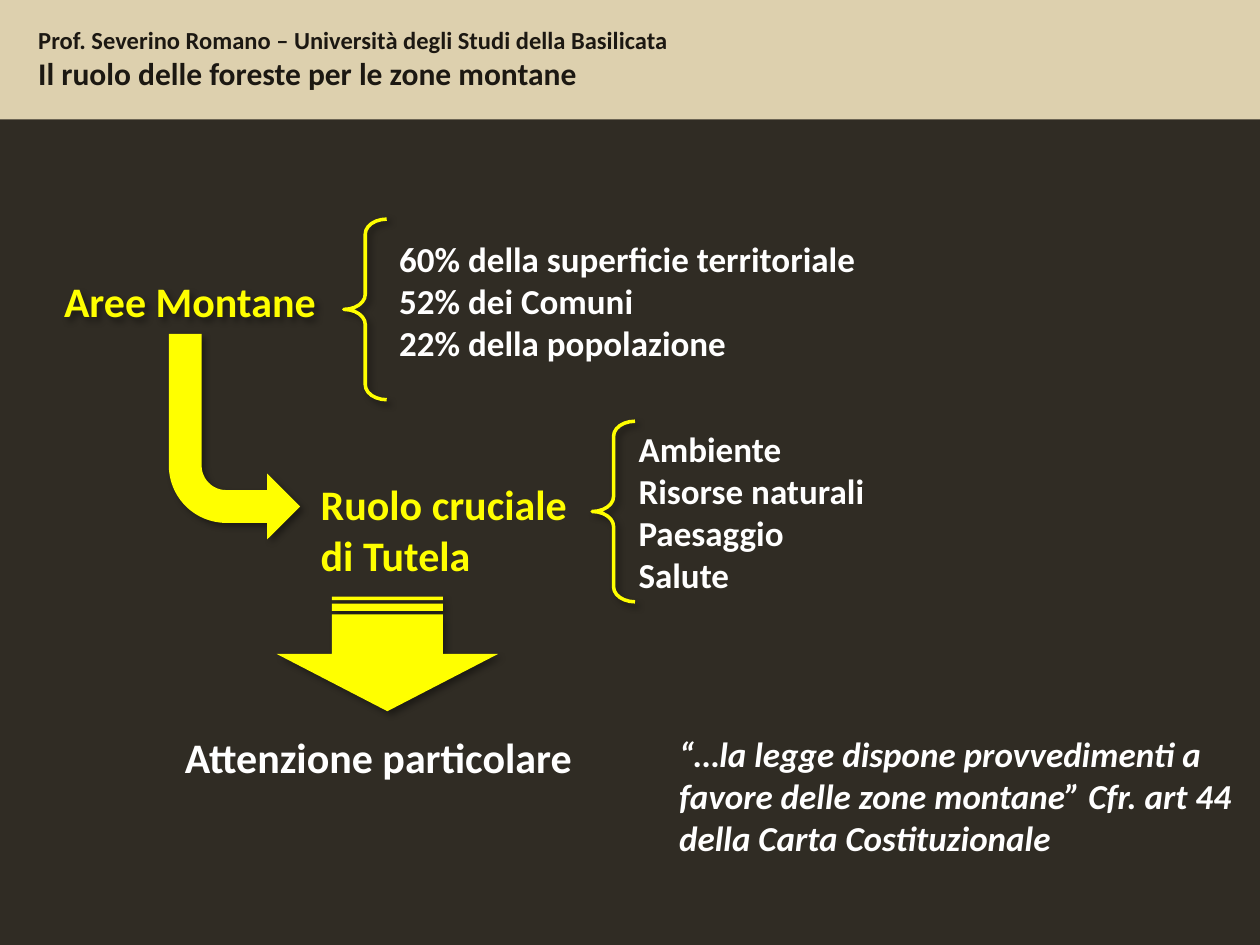
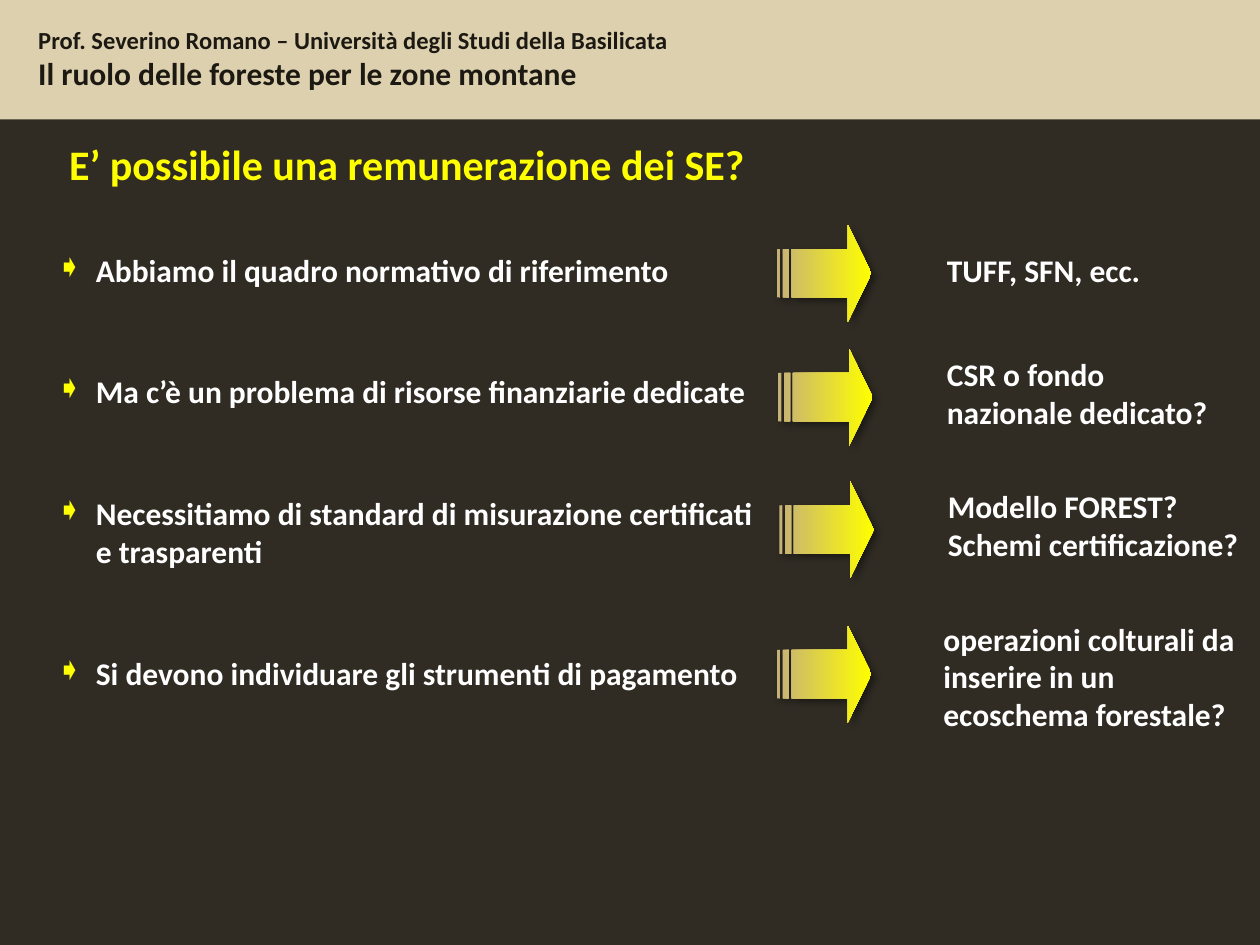
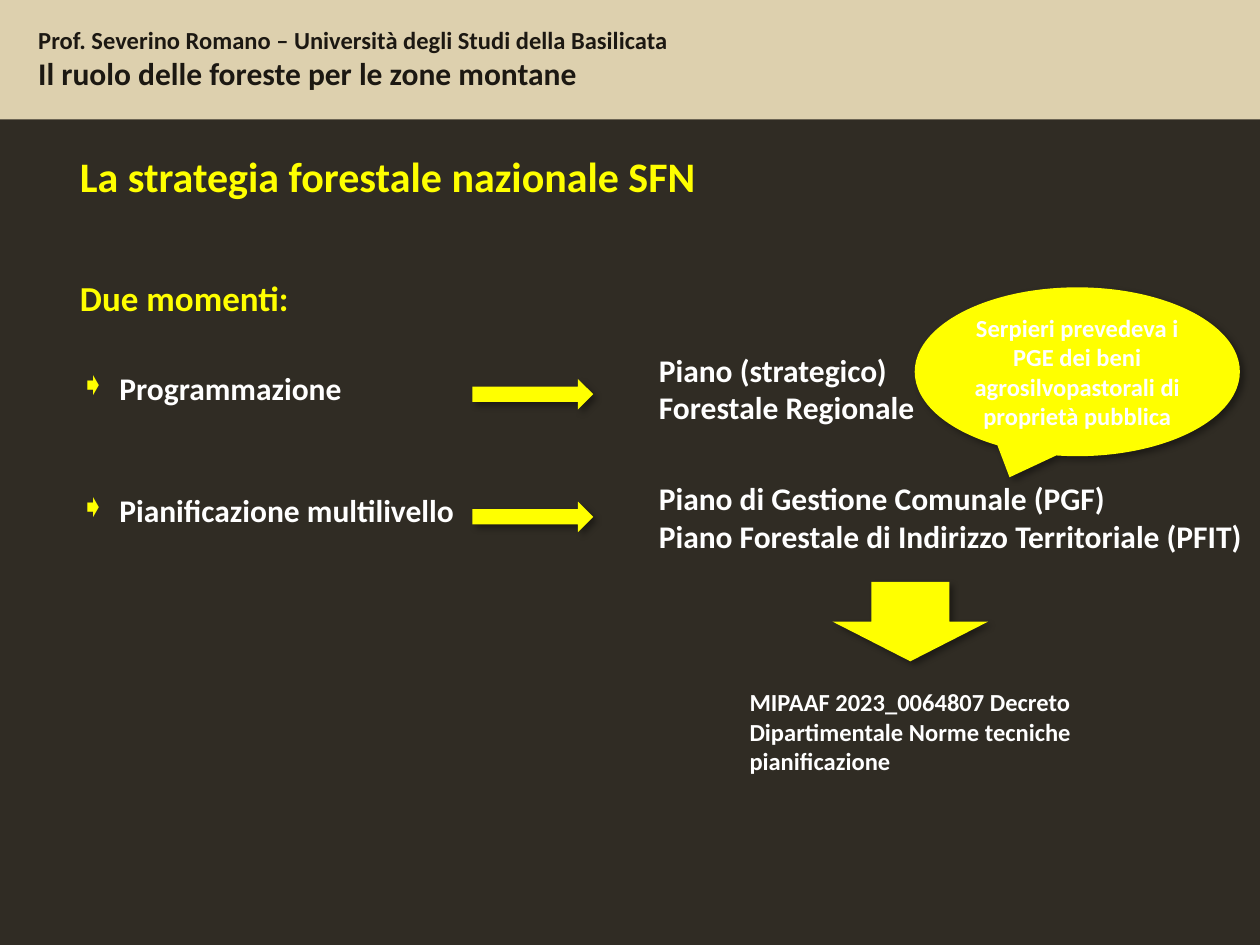
from lxml import etree
from pptx import Presentation
from pptx.dml.color import RGBColor
from pptx.enum.shapes import MSO_SHAPE
from pptx.enum.text import MSO_ANCHOR, MSO_AUTO_SIZE, PP_ALIGN
from pptx.oxml.ns import qn
from pptx.util import Pt

# Shared look
FONT = "Calibri"
DARK, SAND, INK = "302C24", "DDD0AE", "1C1812"
YELLOW, WHITE, OCHRE, BLACK = "FFFF00", "FFFFFF", "C6B178", "000000"
BULLET_INDENT = 22.5


def color(hex_value):
    return RGBColor.from_string(hex_value)


def child(parent, tag, **attributes):
    return etree.SubElement(parent, qn(tag), attributes)


# Text
def add_span(para, text, size, hex_value, italic=False):
    span = para.add_run()
    span.text = text
    span.font.name = FONT
    span.font.size = Pt(size)
    span.font.bold = True
    span.font.italic = italic
    span.font.color.rgb = color(hex_value)


def add_text(page, area, lines, size, hex_value=WHITE, wrap=True, italic=False):
    """Place one paragraph per line; a line may be a (text, size) pair."""
    box = page.shapes.add_textbox(*(Pt(value) for value in area))
    frame = box.text_frame
    frame.word_wrap = wrap
    frame.auto_size = MSO_AUTO_SIZE.SHAPE_TO_FIT_TEXT
    for index, line in enumerate(lines):
        para = frame.paragraphs[0] if index == 0 else frame.add_paragraph()
        text, line_size = line if isinstance(line, tuple) else (line, size)
        add_span(para, text, line_size, hex_value, italic)
    return box


def add_bullets(page, area, lines, before, after):
    box = add_text(page, area, lines, 18)
    for index, para in enumerate(box.text_frame.paragraphs):
        properties = para._p.get_or_add_pPr()
        properties.set("marL", str(Pt(BULLET_INDENT)))
        properties.set("indent", str(-Pt(BULLET_INDENT)))
        child(child(properties, "a:buClr"), "a:srgbClr", val=YELLOW)
        child(properties, "a:buChar", char="➧")
        para.space_before = Pt(before if index else 0)
        para.space_after = Pt(after)


# Shapes
def add_shadow(shape):
    shape.shadow.inherit = False
    effects = shape.element.spPr.find(qn("a:effectLst"))
    shadow = child(effects, "a:outerShdw", blurRad=str(Pt(4)), dist=str(Pt(3)),
                   dir="2700000", algn="tl", rotWithShape="0")
    child(child(shadow, "a:srgbClr", val=BLACK), "a:alpha", val="40000")


def add_figure(page, kind, area, rotation=0):
    figure = page.shapes.add_shape(kind, *(Pt(value) for value in area))
    figure.fill.solid()
    figure.fill.fore_color.rgb = color(YELLOW)
    figure.line.fill.background()
    figure.rotation = rotation
    add_shadow(figure)
    return figure


def add_brace(page, left, top):
    brace = add_figure(page, MSO_SHAPE.LEFT_BRACE, (left, top, 24.5, 103.2))
    brace.adjustments[0] = 0.35
    brace.fill.background()
    brace.line.color.rgb = color(YELLOW)
    brace.line.width = Pt(2)


def add_striped_arrow(page, left, top):
    arrow = add_figure(page, MSO_SHAPE.STRIPED_RIGHT_ARROW, (left, top, 54, 55.4))
    arrow.adjustments[1] = 0.25
    arrow.fill.gradient()
    arrow.fill.gradient_angle = 0
    for stop, position, hex_value in zip(arrow.fill.gradient_stops, (0, 1), (OCHRE, YELLOW)):
        stop.position = position
        stop.color.rgb = color(hex_value)


def add_callout(page, area, text):
    callout = add_figure(page, MSO_SHAPE.OVAL_CALLOUT, area)
    frame = callout.text_frame
    frame.word_wrap = True
    frame.vertical_anchor = MSO_ANCHOR.MIDDLE
    frame.margin_left = frame.margin_right = Pt(3)
    para = frame.paragraphs[0]
    para.alignment = PP_ALIGN.CENTER
    add_span(para, text, 14, WHITE)


# Band and heading, kept on the layout so that every slide shows them
def dress_layout(layout, page):
    for placeholder in list(layout.placeholders):
        layout.shapes.element.remove(placeholder.element)
    layout.background.fill.solid()
    layout.background.fill.fore_color.rgb = color(DARK)
    band = page.shapes.add_shape(MSO_SHAPE.RECTANGLE, 0, 0, Pt(720), Pt(68.2))
    band.shadow.inherit = False
    band.fill.solid()
    band.fill.fore_color.rgb = color(SAND)
    band.line.fill.background()
    heading = add_text(page, (14.8, 10.5, 479.5, 46), [
        ("Prof. Severino Romano – Università degli Studi della Basilicata", 14),
        "Il ruolo delle foreste per le zone montane"], 18, INK)
    for shape in (band, heading):
        layout.shapes.element.append(shape.element)


# Slides
def build_mountain_areas(page):
    areas = add_text(page, (29.5, 154, 159.8, 36.3), ["Aree Montane"], 24, YELLOW, wrap=False)
    add_shadow(areas)
    add_brace(page, 196.5, 125.2)
    add_text(page, (221, 132.2, 303, 80), [
        "60% della superficie territoriale", "52% dei Comuni",
        "22% della popolazione"], 20)
    bend = add_figure(page, MSO_SHAPE.BENT_ARROW, (96.5, 190.8, 75, 117.4))
    bend.element.spPr.get_or_add_xfrm().set("flipV", "1")
    add_text(page, (176.2, 270, 177, 65.4), ["Ruolo cruciale di Tutela"], 24, YELLOW)
    add_brace(page, 338.4, 240.7)
    add_text(page, (357.8, 240.7, 231, 104.2), [
        "Ambiente", "Risorse naturali", "Paesaggio", "Salute"], 20)
    add_figure(page, MSO_SHAPE.STRIPED_RIGHT_ARROW, (188.6, 310.3, 65.5, 126.7), 90)
    add_text(page, (98.6, 414.7, 258.5, 36.3), ["Attenzione particolare"], 24)
    add_text(page, (381, 415, 339, 80), [
        "“…la legge dispone provvedimenti a favore delle zone montane” "
        "Cfr. art 44 della Carta Costituzionale"], 20, italic=True)


def build_payment(page):
    add_bullets(page, (25.2, 139.7, 424.8, 262), [
        "Abbiamo il quadro normativo di riferimento",
        "Ma c’è un problema di risorse finanziarie dedicate",
        "Necessitiamo di standard di misurazione certificati e trasparenti",
        "Si devono individuare gli strumenti di pagamento"], 18, 30)
    add_text(page, (32.4, 75.6, 438.5, 36.3), ["E’ possibile una remunerazione dei SE?"], 24, YELLOW)
    # Arrow left and top, then answer area and lines
    answers = [
        (444, 128.5, (534, 139.7, 144, 29), ["TUFF, SFN, ecc."]),
        (444.7, 199.3, (534, 199.3, 173.5, 51), ["CSR o fondo nazionale dedicato?"]),
        (445.3, 275, (534.5, 275, 185.8, 51),
         ["Modello FOREST?", "Schemi certificazione?"]),
        (444, 357.5, (532, 350.5, 190.8, 72.7),
         ["operazioni colturali da inserire in un ecoschema forestale?"]),
    ]
    for left, top, area, lines in answers:
        add_striped_arrow(page, left, top)
        add_text(page, area, lines, 18)


def build_strategy(page):
    add_text(page, (38.6, 82.3, 370, 36.3), ["La strategia forestale nazionale SFN"],
             24, YELLOW, wrap=False)
    add_text(page, (38.6, 154.5, 360.7, 31.5), ["Due momenti:"], 20, YELLOW)
    add_bullets(page, (38.6, 207.4, 250.6, 99.4),
                ["Programmazione", "Pianificazione multilivello"], 12, 36)
    add_text(page, (369.4, 196.8, 174.2, 51), ["Piano (strategico) Forestale Regionale"], 18)
    add_text(page, (369.4, 270, 355.7, 51), [
        "Piano di Gestione Comunale (PGF)",
        "Piano Forestale di Indirizzo Territoriale (PFIT)"], 18)
    for top in (216.5, 286.6):
        add_figure(page, MSO_SHAPE.RIGHT_ARROW, (270, top, 69, 17.5))
    add_text(page, (421.2, 389.3, 226.8, 58.2), [
        "MIPAAF 2023_0064807 Decreto Dipartimentale Norme tecniche pianificazione"], 14)
    add_figure(page, MSO_SHAPE.RIGHT_ARROW, (497.5, 310.7, 45.4, 89), 90)
    add_callout(page, (522.7, 164.2, 185.8, 96.5),
                "Serpieri prevedeva i PGE dei beni agrosilvopastorali di proprietà pubblica")


def main():
    deck = Presentation()
    deck.slide_width, deck.slide_height = Pt(720), Pt(540)
    blank = deck.slide_layouts[6]
    builders = (build_mountain_areas, build_payment, build_strategy)
    pages = [deck.slides.add_slide(blank) for _ in builders]
    dress_layout(blank, pages[0])
    for build, page in zip(builders, pages):
        build(page)
    deck.save("out.pptx")


if __name__ == "__main__":
    main()
